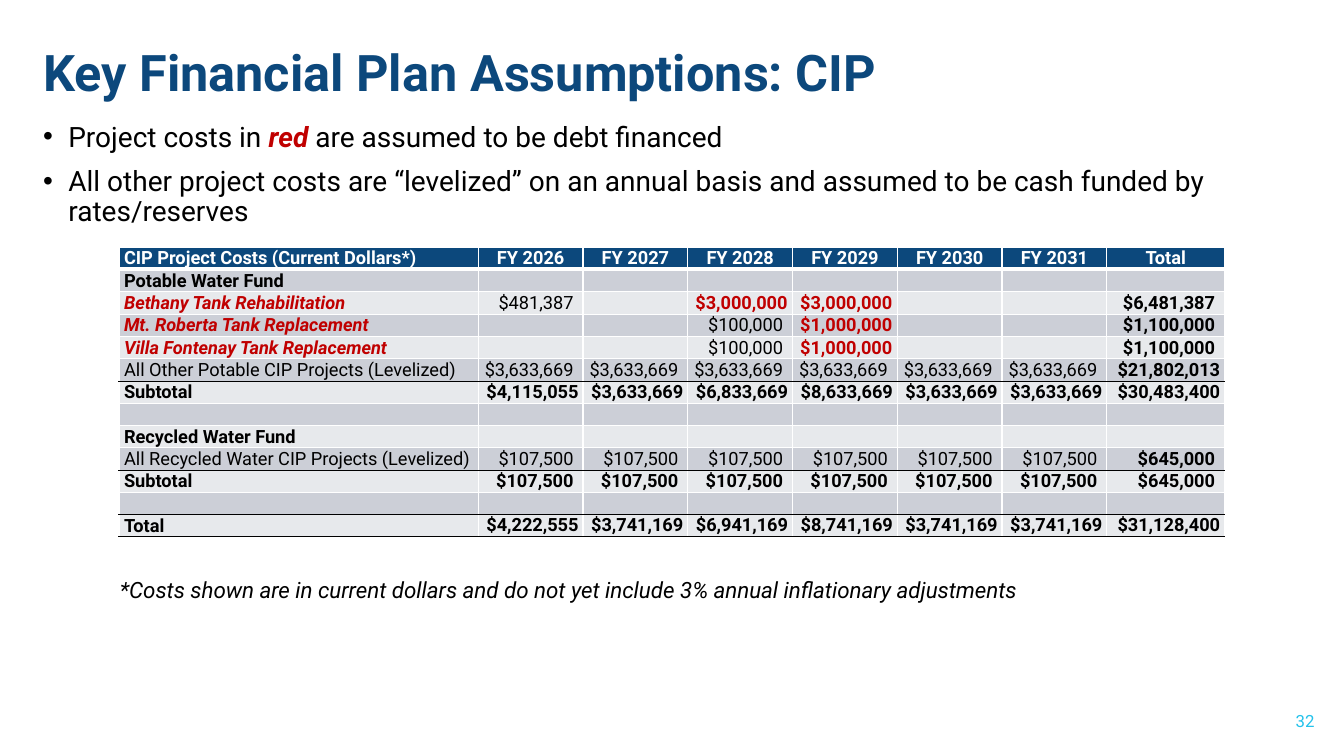
from lxml.etree import SubElement
from pptx import Presentation
from pptx.dml.color import RGBColor
from pptx.enum.text import MSO_ANCHOR, MSO_AUTO_SIZE, PP_ALIGN
from pptx.oxml.ns import qn
from pptx.util import Pt

COLORS = {
    "navy": "0C487C", "red": "C00000", "cyan": "24C2EB", "black": "000000",
    "white": "FFFFFF", "dark_band": "CCCFD7", "light_band": "E7E9EC",
}
FONT = "Roboto"

TITLE = "Key Financial Plan Assumptions: CIP"
BULLETS = [
    [("Project costs in ", {}),
     ("red ", {"color": "red", "bold": True, "italic": True}),
     ("are assumed to be debt financed", {})],
    [("All other project costs are “levelized” on an annual basis and assumed "
      "to be cash funded by rates/reserves", {})],
]
FOOTNOTE = ("*Costs shown are in current dollars and do not yet include "
            "3% annual inflationary adjustments")
PAGE_NUMBER = "32"

YEARS = [f"FY {year}" for year in range(2026, 2032)]
# Each row: kind, label, one amount per year, total
ROWS = [
    ("header", "CIP Project Costs (Current Dollars*)", YEARS, "Total"),
    ("fund", "Potable Water Fund", [""] * 6, ""),
    ("debt", "Bethany Tank Rehabilitation",
     ["$481,387", "", "$3,000,000", "$3,000,000", "", ""], "$6,481,387"),
    ("debt", "Mt. Roberta Tank Replacement",
     ["", "", "$100,000", "$1,000,000", "", ""], "$1,100,000"),
    ("debt", "Villa Fontenay Tank Replacement",
     ["", "", "$100,000", "$1,000,000", "", ""], "$1,100,000"),
    ("cash", "All Other Potable CIP Projects (Levelized)",
     ["$3,633,669"] * 6, "$21,802,013"),
    ("sum", "Subtotal",
     ["$4,115,055", "$3,633,669", "$6,833,669", "$8,633,669", "$3,633,669",
      "$3,633,669"], "$30,483,400"),
    ("gap", "", [""] * 6, ""),
    ("fund", "Recycled Water Fund", [""] * 6, ""),
    ("cash", "All Recycled Water CIP Projects (Levelized)",
     ["$107,500"] * 6, "$645,000"),
    ("sum", "Subtotal", ["$107,500"] * 6, "$645,000"),
    ("gap", "", [""] * 6, ""),
    ("sum", "Total",
     ["$4,222,555", "$3,741,169", "$6,941,169", "$8,741,169", "$3,741,169",
      "$3,741,169"], "$31,128,400"),
]
DEBT_AMOUNTS = {"$3,000,000", "$1,000,000"}
COLUMN_WIDTHS = [256.6] + [74.86] * 6 + [84.1]
ROW_HEIGHT = 15.6
TABLE_LEFT, TABLE_TOP = 85, 176.4


def add_text(paragraph, text, size=13, color="black", bold=False, italic=False,
             align=PP_ALIGN.LEFT):
    paragraph.alignment = align
    run = paragraph.add_run()
    run.text = text
    font = run.font
    font.name, font.size, font.bold, font.italic = FONT, Pt(size), bold, italic
    font.color.rgb = RGBColor.from_string(COLORS[color])


def add_box(slide, left, top, width, height, anchor=MSO_ANCHOR.TOP):
    frame = slide.shapes.add_textbox(
        Pt(left), Pt(top), Pt(width), Pt(height)).text_frame
    frame.word_wrap = True
    frame.vertical_anchor = anchor
    return frame


def add_bullet(paragraph):
    properties = paragraph._p.get_or_add_pPr()
    properties.set("marL", str(Pt(18)))
    properties.set("indent", str(Pt(-18)))
    SubElement(properties, qn("a:buFont"), typeface="Arial")
    SubElement(properties, qn("a:buChar"), char="•")


def set_borders(cell, top, bottom, bottom_width):
    properties = cell._tc.get_or_add_tcPr()
    for side, color, width in (("L", "white", 1), ("R", "white", 1),
                               ("T", top, 1), ("B", bottom, bottom_width)):
        line = SubElement(properties, qn(f"a:ln{side}"), w=str(Pt(width)))
        fill = SubElement(line, qn("a:solidFill"))
        SubElement(fill, qn("a:srgbClr"), val=COLORS[color])


def text_format(kind, column, text):
    """Return the format of a cell's text from its row kind and column."""
    if kind == "header":
        return {"color": "white", "bold": True,
                "align": PP_ALIGN.CENTER if column else PP_ALIGN.LEFT}
    if column == 0:
        is_debt = kind == "debt"
        return {"color": "red" if is_debt else "black", "bold": kind != "cash",
                "italic": is_debt}
    is_debt = kind == "debt" and text in DEBT_AMOUNTS
    return {"color": "red" if is_debt else "black", "align": PP_ALIGN.RIGHT,
            "bold": is_debt or kind == "sum" or column == 7}


def fill_cell(cell, row, column, text):
    kind = ROWS[row][0]
    ruled = [index for index in range(len(ROWS))
             if index + 1 == len(ROWS) or ROWS[index + 1][0] == "sum"]
    set_borders(cell, "black" if row - 1 in ruled else "white",
                "black" if row in ruled else "white",
                3 if kind == "header" else 1)
    band = "dark_band" if row % 2 else "light_band"
    cell.fill.solid()
    cell.fill.fore_color.rgb = RGBColor.from_string(
        COLORS["navy" if kind == "header" else band])

    is_amount = column > 0 and kind != "header"
    is_wide = is_amount and (len(text) > 10 or kind == "sum" and len(text) > 9)
    cell.margin_left = cell.margin_right = Pt(0 if is_wide else 3.6)
    cell.margin_top = Pt(0 if is_wide else 0.36)
    cell.margin_bottom = 0
    cell.vertical_anchor = MSO_ANCHOR.MIDDLE
    paragraph = cell.text_frame.paragraphs[0]
    if text:
        add_text(paragraph, f"{text} " if is_amount else text,
                 **text_format(kind, column, text))
    else:
        SubElement(paragraph._p, qn("a:endParaRPr"), sz="1000")


def add_cost_table(slide):
    table = slide.shapes.add_table(
        len(ROWS), len(COLUMN_WIDTHS), Pt(TABLE_LEFT), Pt(TABLE_TOP),
        Pt(sum(COLUMN_WIDTHS)), Pt(ROW_HEIGHT * len(ROWS))).table
    for column, width in zip(table.columns, COLUMN_WIDTHS):
        column.width = Pt(width)
    for row, (_, label, amounts, total) in enumerate(ROWS):
        table.rows[row].height = Pt(ROW_HEIGHT)
        for column, text in enumerate([label, *amounts, total]):
            fill_cell(table.cell(row, column), row, column, text)


def main():
    presentation = Presentation()
    presentation.slide_width, presentation.slide_height = Pt(960), Pt(540)
    slide = presentation.slides.add_slide(presentation.slide_layouts[5])

    title = slide.shapes.title
    title.left, title.top, title.width, title.height = (
        Pt(23.76), Pt(28.8), Pt(921.6), Pt(50.4))
    title.text_frame.auto_size = MSO_AUTO_SIZE.NONE
    title.text_frame.vertical_anchor = MSO_ANCHOR.MIDDLE
    heading = title.text_frame.paragraphs[0]
    heading.line_spacing = 0.9
    add_text(heading, TITLE, size=36, color="navy", bold=True)

    frame = add_box(slide, 23.76, 84.24, 911.5, 88)
    for index, runs in enumerate(BULLETS):
        paragraph = frame.add_paragraph() if index else frame.paragraphs[0]
        add_bullet(paragraph)
        paragraph.line_spacing = 0.9
        paragraph.space_before = Pt(10 if index else 0)
        for text, style in runs:
            add_text(paragraph, text, size=20, **style)

    add_cost_table(slide)
    footnote = add_box(slide, 78.48, 408.24, 828, 26.64)
    add_text(footnote.paragraphs[0], FOOTNOTE, size=16, italic=True)
    number = add_box(slide, 730.08, 500.4, 216, 28.8, MSO_ANCHOR.MIDDLE)
    add_text(number.paragraphs[0], PAGE_NUMBER, size=12, color="cyan",
             align=PP_ALIGN.RIGHT)
    presentation.save("out.pptx")


if __name__ == "__main__":
    main()
